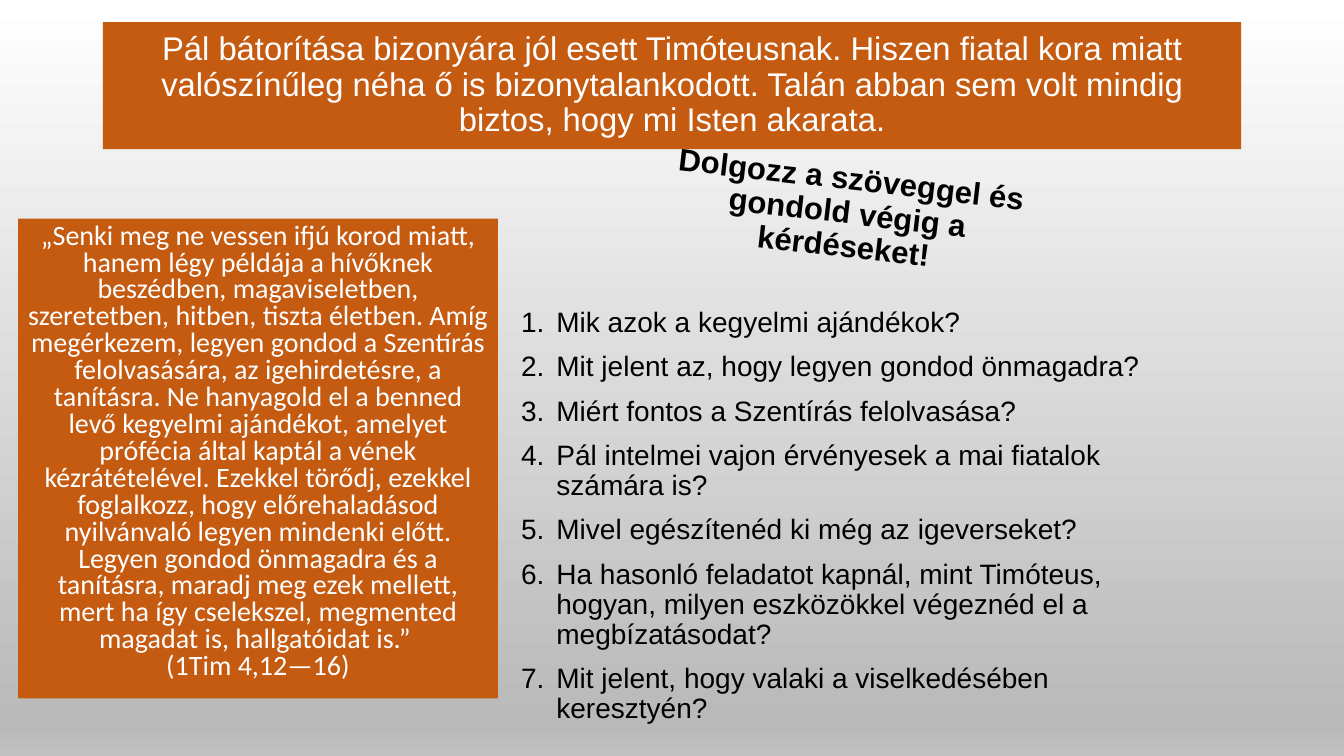
from copy import deepcopy
from lxml.etree import SubElement
from pptx import Presentation
from pptx.dml.color import RGBColor
from pptx.enum.shapes import MSO_SHAPE
from pptx.enum.text import MSO_ANCHOR, PP_ALIGN
from pptx.oxml.ns import qn
from pptx.util import Inches, Pt


def color(hex_code):
    return RGBColor.from_string(hex_code)


def write(shape, paragraphs, anchor, font, **layout):
    frame = shape.text_frame
    frame.word_wrap = True
    frame.vertical_anchor = anchor
    for number, words in enumerate(paragraphs):
        paragraph = frame.paragraphs[0] if number == 0 else frame.add_paragraph()
        paragraph.text = words
        for name, value in layout.items():
            setattr(paragraph, name, value)
        for run in paragraph.runs:
            run.font.color.rgb = color(font["color"])
            for name in ("name", "size", "bold"):
                setattr(run.font, name, font[name])


ORANGE = "C55A11"
intro = ("Pál bátorítása bizonyára jól esett Timóteusnak. Hiszen fiatal kora miatt "
         "valószínűleg néha ő is bizonytalankodott. Talán abban sem volt mindig biztos, "
         "hogy mi Isten akarata.")
verse = ("„Senki meg ne vessen ifjú korod miatt, hanem légy példája a hívőknek beszédben, "
         "magaviseletben, szeretetben, hitben, tiszta életben. Amíg megérkezem, legyen gondod "
         "a Szentírás felolvasására, az igehirdetésre, a tanításra. Ne hanyagold el a benned "
         "levő kegyelmi ajándékot, amelyet prófécia által kaptál a vének kézrátételével. "
         "Ezekkel törődj, ezekkel foglalkozz, hogy előrehaladásod nyilvánvaló legyen mindenki "
         "előtt. Legyen gondod önmagadra és a tanításra, maradj meg ezek mellett, mert ha így "
         "cselekszel, megmented magadat is, hallgatóidat is.” \n(1Tim 4,12—16)")
questions = [
    "Mik azok a kegyelmi ajándékok?",
    "Mit jelent az, hogy legyen gondod önmagadra?",
    "Miért fontos a Szentírás felolvasása?",
    "Pál intelmei vajon érvényesek a mai fiatalok számára is?",
    "Mivel egészítenéd ki még az igeverseket?",
    "Ha hasonló feladatot kapnál, mint Timóteus, hogyan, milyen eszközökkel végeznéd el "
    "a megbízatásodat?",
    "Mit jelent, hogy valaki a viselkedésében keresztyén?",
]

deck = Presentation()
deck.slide_width, deck.slide_height = Inches(13.33), Inches(7.5)
slide = deck.slides.add_slide(deck.slide_layouts[6])

# Grey background fading downwards
backdrop = slide.background.fill
backdrop.gradient()
backdrop.gradient_angle = 270
stop_list = slide.element.find(".//" + qn("a:gsLst"))
stop_list.append(deepcopy(stop_list[-1]))
shades = [(0, "FFFFFF"), (0.96, "B9B9B9"), (1, "C1C1C1")]
for stop, (position, shade) in zip(backdrop.gradient_stops, shades):
    stop.position = position
    stop.color.rgb = color(shade)

# Numbered questions
question_list = slide.shapes.add_textbox(Inches(5.07), Inches(3.01), Inches(6.63), Inches(4.27))
write(question_list, questions, MSO_ANCHOR.TOP,
      dict(name="Arial", size=Pt(20), bold=False, color="000000"),
      line_spacing=0.9, space_before=Pt(10))
for question in question_list.text_frame.paragraphs:
    properties = question._p.get_or_add_pPr()
    properties.set("marL", str(Inches(0.35)))
    properties.set("indent", str(-Inches(0.35)))
    SubElement(properties, qn("a:buFont"), typeface="+mj-lt")
    SubElement(properties, qn("a:buAutoNum"), type="arabicPeriod")

# Orange panels: introduction and Bible passage
panels = [
    ((1.02, 0.22, 11.29, 1.26), intro, MSO_ANCHOR.MIDDLE, "Arial", 23.4, 0.9, 0),
    ((0.18, 2.17, 4.76, 4.76), verse, MSO_ANCHOR.TOP, "Calibri", 20, 0.8, 10),
]
for box, words, anchor, typeface, size, spacing, before in panels:
    panel = slide.shapes.add_shape(MSO_SHAPE.RECTANGLE, *map(Inches, box))
    panel.shadow.inherit = False
    panel.fill.solid()
    panel.fill.fore_color.rgb = color(ORANGE)
    panel.line.fill.background()
    write(panel, [words], anchor,
          dict(name=typeface, size=Pt(size), bold=False, color="FFFFFF"),
          alignment=PP_ALIGN.CENTER, line_spacing=spacing, space_before=Pt(before))

# Tilted instruction
instruction = slide.shapes.add_textbox(Inches(6.21), Inches(1.81), Inches(4.36), Inches(0.86))
instruction.rotation = 6.7
write(instruction, ["Dolgozz a szöveggel és gondold végig a kérdéseket!"], MSO_ANCHOR.BOTTOM,
      dict(name="Arial", size=Pt(22.2), bold=True, color="000000"),
      alignment=PP_ALIGN.CENTER, line_spacing=0.9)

deck.save("out.pptx")
